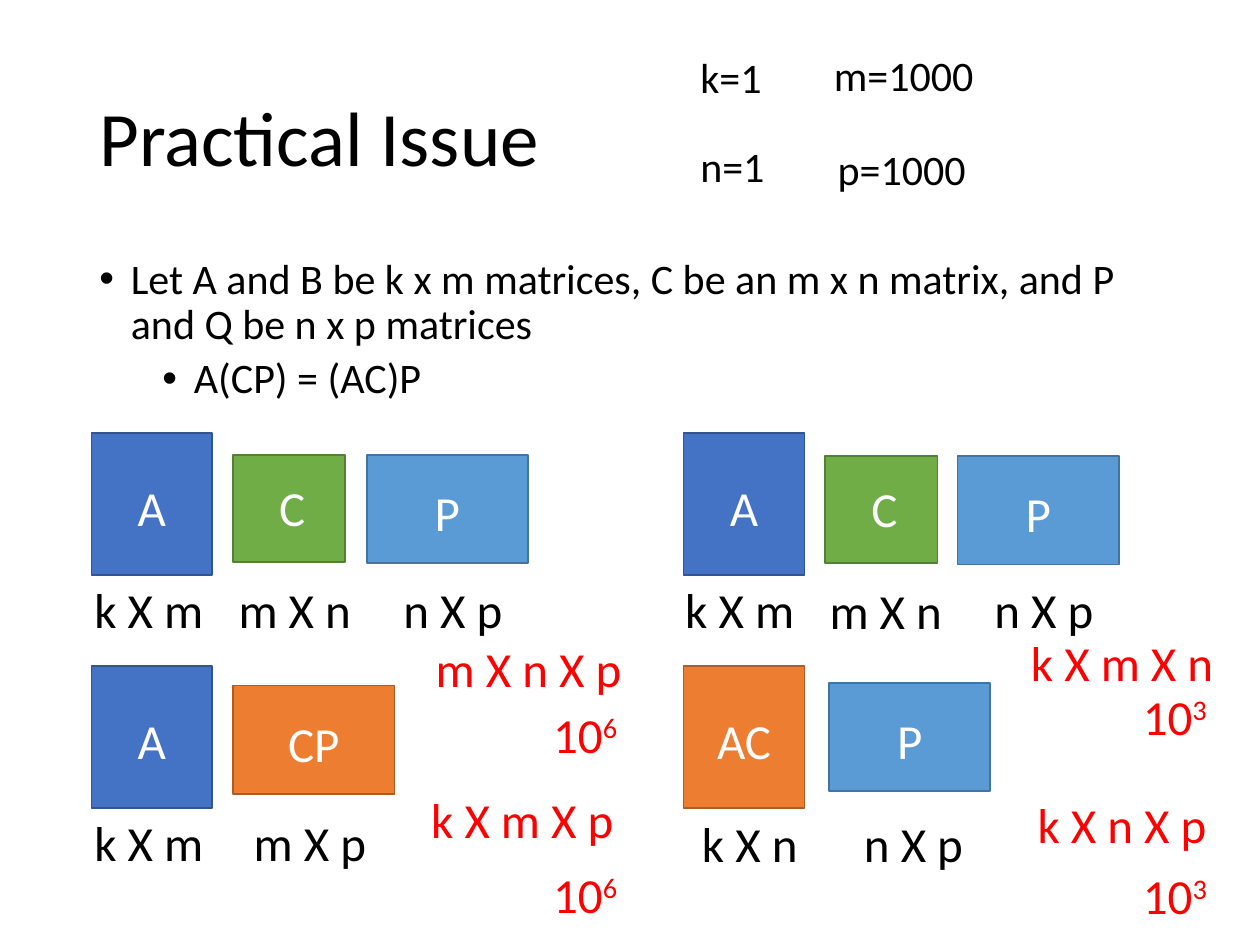
from pptx import Presentation
from pptx.dml.color import RGBColor as RGB
from pptx.enum.shapes import MSO_SHAPE as Shape
from pptx.enum.text import MSO_ANCHOR as Anchor, MSO_AUTO_SIZE as Fit, PP_ALIGN as Align
from pptx.oxml.ns import qn
from pptx.util import Inches, Pt
from lxml.etree import SubElement

HUES = {
    "black": "000000", "white": "FFFFFF", "red": "FF0000",
    "blue": "4472C4", "blue edge": "325491",
    "green": "70AD47", "green edge": "538035",
    "sky": "5B9BD5", "sky edge": "43739E",
    "orange": "ED7D31", "orange edge": "AF5C24",
}


def hue(name):
    return RGB.from_string(HUES[name])


def write(shapes, words, x, y, w, h, size=28, color="black", align=Align.CENTER, power=None):
    box = shapes.add_textbox(Inches(x), Inches(y), Inches(w), Inches(h))
    frame = box.text_frame
    frame.word_wrap = True
    frame.auto_size = Fit.SHAPE_TO_FIT_TEXT
    frame.text = words
    if power:
        run = frame.paragraphs[0].add_run()
        run.text = power
        run._r.get_or_add_rPr().set("baseline", "30000")
    for para in frame.paragraphs:
        para.alignment = align
        para.font.name = "Calibri"
        para.font.size = Pt(size)
        para.font.color.rgb = hue(color)
    return frame


prs = Presentation()
prs.slide_width, prs.slide_height = Inches(10), Inches(7.5)
slide = prs.slides.add_slide(prs.slide_layouts[6])
shapes = slide.shapes

title = write(shapes, "Practical Issue", 0.69, 0.4, 8.62, 1.45, 44, align=Align.LEFT)
title.auto_size = Fit.NONE
title.vertical_anchor = Anchor.MIDDLE
title.paragraphs[0].line_spacing = 0.9

body = write(
    shapes,
    "Let A and B be k x m matrices, C be an m x n matrix, and P and Q be n x p matrices\n"
    "A(CP) = (AC)P",
    0.69, 2, 8.62, 4.76, 24, align=Align.LEFT,
)
body.auto_size = Fit.NONE
for level, (para, left, space) in enumerate(zip(body.paragraphs, (0.25, 0.75), (10, 5))):
    para.level = level
    para.line_spacing = 0.9
    para.space_before = Pt(space)
    props = para._p.get_or_add_pPr()
    props.set("marL", str(Inches(left)))
    props.set("indent", str(Inches(-0.25)))
    font = SubElement(props, qn("a:buFont"))
    font.set("typeface", "Arial")
    SubElement(props, qn("a:buChar")).set("char", "•")
    props.append(props.find(qn("a:defRPr")))

FORMS = {
    "tall": (1.13, 0.96, 90, 0.145, 0.22),
    "square": (0.89, 0.85, 0, 0.05, 0.13),
    "wide": (1.28, 0.86, 180, 0.22, 0.17),
}
for name, form, color, x, y in (
    ("A", "tall", "blue", 0.64, 3.52),
    ("C", "square", "green", 1.85, 3.61),
    ("P", "wide", "sky", 2.91, 3.61),
    ("A", "tall", "blue", 0.64, 5.37),
    ("CP", "wide", "orange", 1.85, 5.44),
    ("A", "tall", "blue", 5.34, 3.52),
    ("C", "square", "green", 6.55, 3.62),
    ("P", "wide", "sky", 7.6, 3.62),
    ("AC", "tall", "orange", 5.34, 5.37),
    ("P", "wide", "sky", 6.58, 5.42),
):
    w, h, turn, dx, dy = FORMS[form]
    group = shapes.add_group_shape().shapes
    block = group.add_shape(Shape.FLOWCHART_PROCESS, Inches(x), Inches(y), Inches(w), Inches(h))
    block.rotation = turn
    block.shadow.inherit = False
    block.fill.solid()
    block.fill.fore_color.rgb = hue(color)
    block.line.color.rgb = hue(color + " edge")
    block.line.width = Pt(1)
    write(group, name, x + dx, y + dy, 0.84, 0.57, color="white")

for words, x, y, w in (
    ("k X m", 0.47, 4.55, 1.42), ("m X n", 1.61, 4.55, 1.46), ("n X p", 3.03, 4.55, 1.13),
    ("k X m", 0.47, 6.4, 1.42), ("m X p", 1.73, 6.4, 1.46),
    ("k X m", 5.16, 4.55, 1.42), ("m X n", 6.3, 4.56, 1.46), ("n X p", 7.72, 4.55, 1.13),
    ("k X n", 5.24, 6.41, 1.42), ("n X p", 6.52, 6.41, 1.46),
):
    write(shapes, words, x, y, w, 0.57)

for words, power, x, y, w in (
    ("m X n X p", None, 3.18, 5.02, 2.03), ("10", "6", 3.63, 5.54, 2.03),
    ("k X m X p", None, 3.13, 6.22, 2.03), ("10", "6", 3.63, 6.81, 2.03),
    ("k X m X n", None, 7.89, 4.97, 2.03), ("10", "3", 8.31, 5.4, 2.03),
    ("k X n X p", None, 7.89, 6.26, 2.03), ("10", "3", 8.8, 6.82, 1.05),
):
    write(shapes, words, x, y, w, 0.57, color="red", power=power)

for words, x, y, w in (
    ("k=1", 5.46, 0.36, 1.16), ("m=1000", 6.52, 0.34, 1.74),
    ("n=1", 5.46, 1.07, 1.27), ("p=1000", 6.55, 1.09, 1.26),
):
    write(shapes, words, x, y, w, 0.5, 24, align=Align.LEFT)

prs.save("out.pptx")
